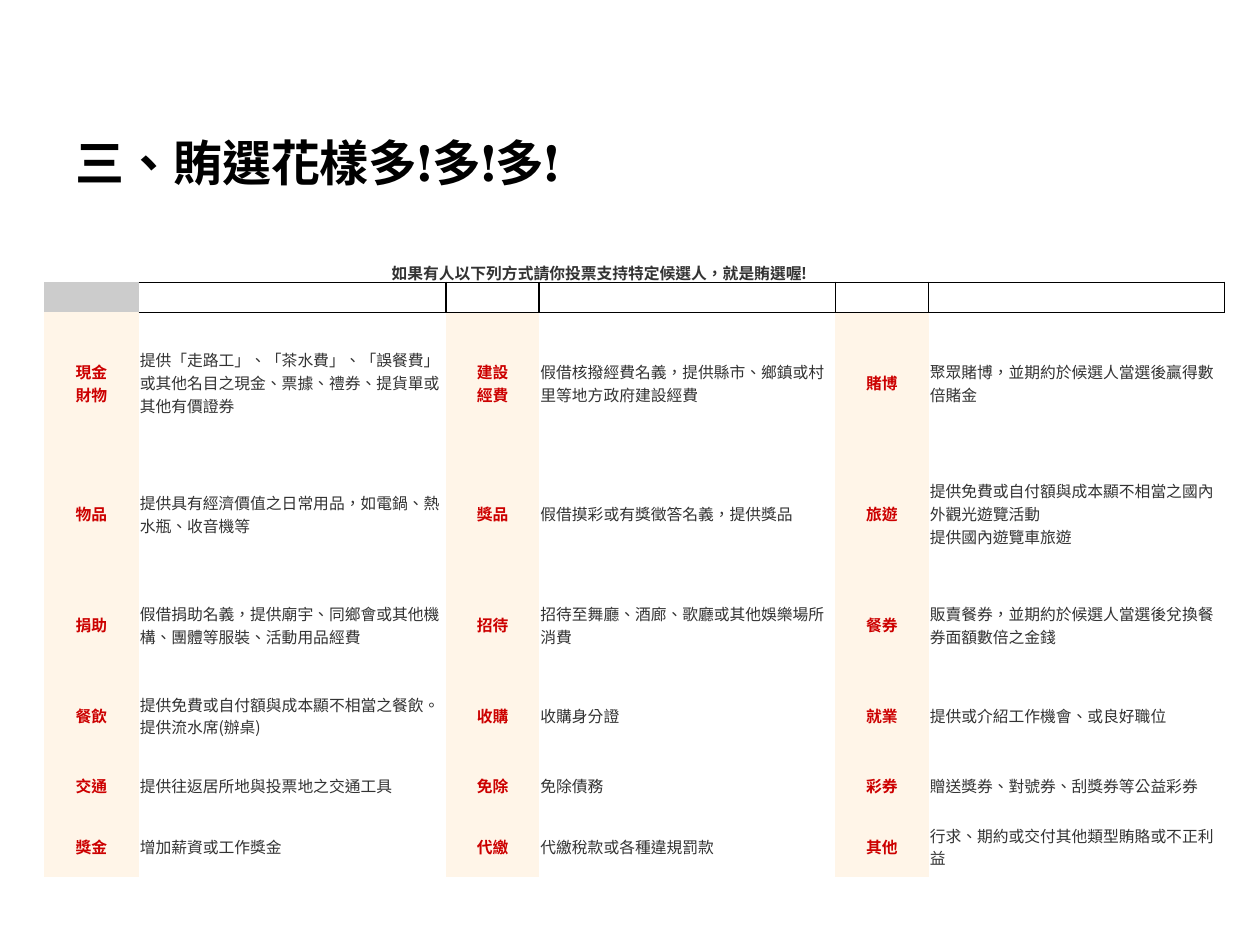
from lxml import etree
from pptx import Presentation
from pptx import util as u
from pptx.dml.color import RGBColor
from pptx.enum import text
from pptx.oxml.ns import qn

# The slide is a grid of 100 columns by 75 rows of square units.
UNIT = u.Inches(0.1)
COLORS = {
    "title": "000000", "body": "333333", "label": "CC0000", "border": "000000",
    "label_fill": "FFF5E8", "body_fill": "FFFFFF", "corner_fill": "CCCCCC",
}
CJK_FONT = "Noto Sans CJK TC"
TITLE_FONT = "TeX Gyre Schola"
TABLE_SIZE = 9
NO_STYLE_NO_GRID = "{2D5ABB26-0587-4C30-8999-92F81FD0307C}"

TITLE = "三、賄選花樣多!多!多!"
CAPTION = "如果有人以下列方式請你投票支持特定候選人，就是賄選喔!"
COLUMN_WIDTHS = [7.5, 24.4, 7.4, 23.5, 7.4, 23.5]
ROW_HEIGHTS = [2.4, 11.2, 9.6, 8, 6.4, 4.8, 4.8]
BRIBERY_ROWS = [
    ["現金\v財物",
     "提供「走路工」、「茶水費」、「誤餐費」或其他名目之現金、票據、禮券、提貨單或其他有價證券",
     "建設\v經費", "假借核撥經費名義，提供縣市、鄉鎮或村里等地方政府建設經費",
     "賭博", "聚眾賭博，並期約於候選人當選後贏得數倍賭金"],
    ["物品", "提供具有經濟價值之日常用品，如電鍋、熱水瓶、收音機等",
     "獎品", "假借摸彩或有獎徵答名義，提供獎品",
     "旅遊", "提供免費或自付額與成本顯不相當之國內外觀光遊覽活動\v提供國內遊覽車旅遊"],
    ["捐助", "假借捐助名義，提供廟宇、同鄉會或其他機構、團體等服裝、活動用品經費",
     "招待", "招待至舞廳、酒廊、歌廳或其他娛樂場所消費",
     "餐券", "販賣餐券，並期約於候選人當選後兌換餐券面額數倍之金錢"],
    ["餐飲", "提供免費或自付額與成本顯不相當之餐飲。\v提供流水席(辦桌)",
     "收購", "收購身分證",
     "就業", "提供或介紹工作機會、或良好職位"],
    ["交通", "提供往返居所地與投票地之交通工具",
     "免除", "免除債務",
     "彩券", "贈送獎券、對號券、刮獎券等公益彩券"],
    ["獎金", "增加薪資或工作獎金",
     "代繳", "代繳稅款或各種違規罰款",
     "其他", "行求、期約或交付其他類型賄賂或不正利益"],
]


def units(*counts):
    return [round(count * UNIT) for count in counts]


def format_paragraph(paragraph, size, color, bold, font=CJK_FONT):
    """Format every run and line break of the paragraph."""
    for run in paragraph.runs:
        run.font.size = u.Pt(size)
        run.font.bold = bold
        run.font.name = font
        run.font.color.rgb = RGBColor.from_string(COLORS[color])
        properties = run._r.get_or_add_rPr()
        properties.set("lang", "zh-TW")
        east_asian = etree.Element(qn("a:ea"), typeface=CJK_FONT)
        properties.find(qn("a:latin")).addnext(east_asian)
    for line_break in paragraph._p.findall(qn("a:br")):
        etree.SubElement(line_break, qn("a:rPr"), sz=str(size * 100))


def add_line(slide, box, words, size, color, font=CJK_FONT, wrap=True):
    """Add one bold line of text at the top of the box."""
    text_frame = slide.shapes.add_textbox(*units(*box)).text_frame
    text_frame.word_wrap = wrap
    text_frame.vertical_anchor = text.MSO_ANCHOR.TOP
    text_frame.text = words
    format_paragraph(text_frame.paragraphs[0], size, color, True, font)
    return text_frame


def fill_cell(cell, color):
    cell.fill.solid()
    cell.fill.fore_color.rgb = RGBColor.from_string(COLORS[color])


def add_borders(cell, sides):
    properties = cell._tc.get_or_add_tcPr()
    for position, side in enumerate(sides):
        line = etree.Element(qn(f"a:ln{side}"), w=str(u.Pt(1)))
        fill = etree.SubElement(line, qn("a:solidFill"))
        etree.SubElement(fill, qn("a:srgbClr"), val=COLORS["border"])
        properties.insert(position, line)


def format_header(cells):
    """Shade the corner cell and outline the empty cells after it."""
    for index, cell in enumerate(cells):
        paragraph = cell.text_frame.paragraphs[0]
        etree.SubElement(paragraph._p, qn("a:endParaRPr"), sz=str(TABLE_SIZE * 100))
        if index == 0:
            fill_cell(cell, "corner_fill")
        else:
            cell.fill.background()
            add_borders(cell, "RTB")


def write_cell(cell, words, is_label):
    cell.text_frame.text = words
    cell.vertical_anchor = text.MSO_ANCHOR.MIDDLE
    fill_cell(cell, "label_fill" if is_label else "body_fill")
    paragraph = cell.text_frame.paragraphs[0]
    paragraph.alignment = text.PP_ALIGN.CENTER if is_label else text.PP_ALIGN.LEFT
    format_paragraph(paragraph, TABLE_SIZE, "label" if is_label else "body", is_label)


def add_bribery_table(slide, left, top):
    box = units(left, top, sum(COLUMN_WIDTHS), sum(ROW_HEIGHTS))
    table = slide.shapes.add_table(len(ROW_HEIGHTS), len(COLUMN_WIDTHS), *box).table
    table._tbl.tblPr.find(qn("a:tableStyleId")).text = NO_STYLE_NO_GRID
    table.horz_banding = False
    for column, width in zip(table.columns, units(*COLUMN_WIDTHS)):
        column.width = width
    for row, height in zip(table.rows, units(*ROW_HEIGHTS)):
        row.height = height
    for cell in table.iter_cells():
        cell.margin_left = cell.margin_right = u.Inches(0.01)
        cell.margin_top = cell.margin_bottom = u.Inches(0.01)
    header, *body = table.rows
    format_header(header.cells)
    for row, entries in zip(body, BRIBERY_ROWS):
        for index, (cell, words) in enumerate(zip(row.cells, entries)):
            write_cell(cell, words, is_label=index % 2 == 0)


def main():
    presentation = Presentation()
    presentation.slide_width, presentation.slide_height = units(100, 75)
    slide = presentation.slides.add_slide(presentation.slide_layouts[6])
    add_line(slide, (5, 10, 90, 10), TITLE, 28, "title", TITLE_FONT)
    add_bribery_table(slide, 3.5, 22.4)
    caption = add_line(slide, (30.1, 20.5, 35.2, 4), CAPTION, TABLE_SIZE, "body", wrap=False)
    caption.margin_top = u.Inches(0.04)
    presentation.save("out.pptx")


if __name__ == "__main__":
    main()
